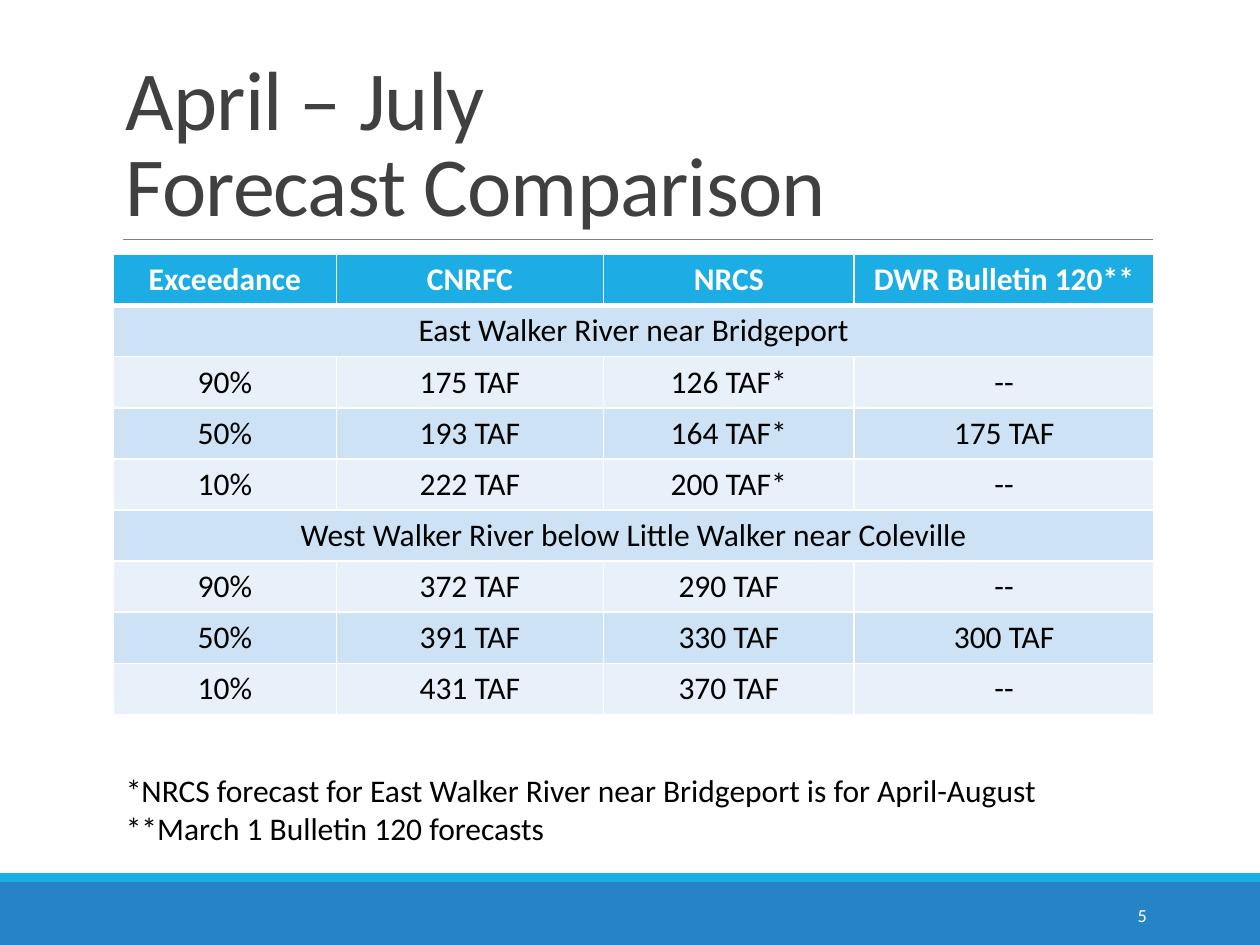
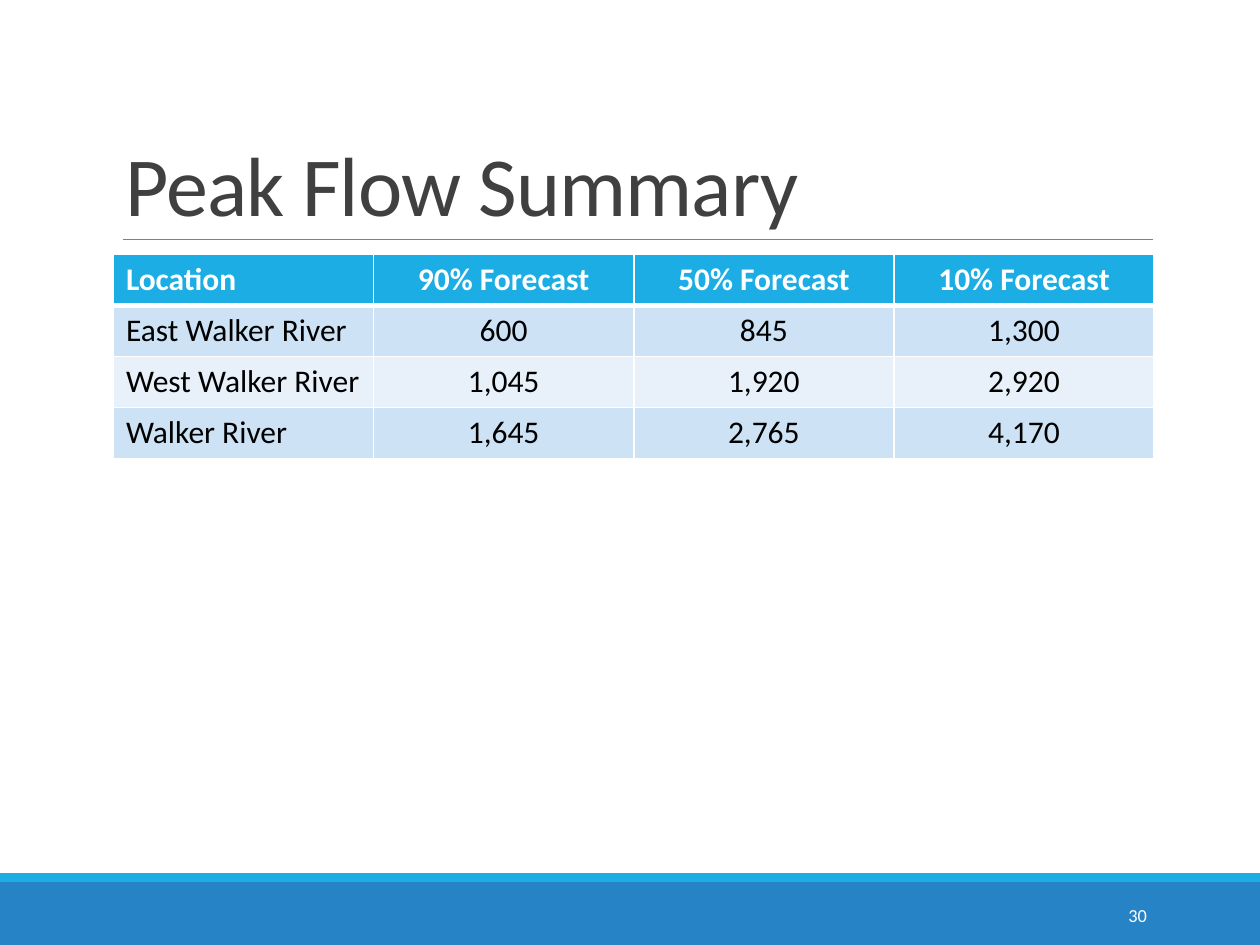
import pptx
import pptx.util
import pptx.dml.color
import pptx.enum.shapes
import pptx.enum.text
import pptx.oxml.ns
from lxml import etree

Inches = pptx.util.Inches
Pt = pptx.util.Pt
RGBColor = pptx.dml.color.RGBColor
ALIGN = pptx.enum.text.PP_ALIGN
ANCHOR = pptx.enum.text.MSO_ANCHOR
qn = pptx.oxml.ns.qn

FONT = "Calibri"
WHITE = RGBColor(0xFF, 0xFF, 0xFF)
BLACK = RGBColor(0x00, 0x00, 0x00)
TITLE_GREY = RGBColor(0x40, 0x40, 0x40)
RULE_GREY = RGBColor(0x80, 0x80, 0x80)
BLUE = RGBColor(0x26, 0x83, 0xC6)
CYAN = RGBColor(0x1C, 0xAD, 0xE4)
BAND_DARK = RGBColor(0xCD, 0xE3, 0xF5)
BAND_LIGHT = RGBColor(0xE8, 0xF1, 0xFA)


class Deck:
    """Holds the shared style and the slide being built."""

    def __init__(self):
        self.prs = pptx.Presentation()
        self.prs.slide_width = Inches(10)
        self.prs.slide_height = Inches(7.5)
        self.s = None

    def add_slide(self, title, number):
        self.s = self.prs.slides.add_slide(self.prs.slide_layouts[6])
        # Footer bands and title rule
        self.band(7, 0.5, BLUE)
        self.band(6.93, 0.07, CYAN)
        self.rule(0.98, 9.15, 1.9)
        # Title and slide number
        sp = self.text(title, 0.9, 0.31, 8.25, 1.59, 48, TITLE_GREY, anchor=ANCHOR.BOTTOM)
        for p in sp.text_frame.paragraphs:
            p.line_spacing = 0.85
            for r in p.runs:
                r._r.get_or_add_rPr().set("spc", "-50")
        self.text(str(number), 8.12, 7.06, 1.08, 0.4, 10.5, WHITE,
                  align=ALIGN.RIGHT, anchor=ANCHOR.MIDDLE)

    def band(self, top, height, color):
        sp = self.s.shapes.add_shape(pptx.enum.shapes.MSO_SHAPE.RECTANGLE,
                                     0, Inches(top), self.prs.slide_width, Inches(height))
        sp.shadow.inherit = False
        sp.fill.solid()
        sp.fill.fore_color.rgb = color
        sp.line.fill.background()

    def rule(self, left, right, y):
        line = self.s.shapes.add_connector(pptx.enum.shapes.MSO_CONNECTOR.STRAIGHT,
                                           Inches(left), Inches(y), Inches(right), Inches(y))
        line.line.color.rgb = RULE_GREY
        line.line.width = Pt(0.5)
        etree.SubElement(line._element.spPr, qn("a:effectLst"))

    def format_text(self, tf, size, color, align, bold=False):
        for p in tf.paragraphs:
            p.alignment = align
            for r in p.runs:
                r.font.name = FONT
                r.font.size = Pt(size)
                r.font.bold = bold
                r.font.color.rgb = color

    def text(self, text, left, top, width, height, size, color,
             align=ALIGN.LEFT, anchor=ANCHOR.TOP, wrap=True):
        sp = self.s.shapes.add_textbox(Inches(left), Inches(top), Inches(width), Inches(height))
        tf = sp.text_frame
        tf.word_wrap = wrap
        tf.vertical_anchor = anchor
        tf.text = text
        self.format_text(tf, size, color, align)
        return sp

    def borders(self, cell, top, bottom):
        tcPr = cell._tc.get_or_add_tcPr()
        for side, width in (("L", 1), ("R", 1), ("T", top), ("B", bottom)):
            ln = etree.SubElement(tcPr, qn("a:ln" + side), w=str(Pt(width)))
            fill = etree.SubElement(ln, qn("a:solidFill"))
            etree.SubElement(fill, qn("a:srgbClr"), val=str(WHITE))

    def table(self, rows, width, height, col_widths=None, first_align=ALIGN.CENTER):
        """A one-item row becomes a heading across all columns."""
        n_cols = len(rows[0])
        table = self.s.shapes.add_table(len(rows), n_cols, Inches(0.9), Inches(2.02),
                                        Inches(width), Inches(height)).table
        table.horz_banding = False
        for col, col_width in zip(table.columns, col_widths or []):
            col.width = Inches(col_width)
        for i, row in enumerate(rows):
            header = i == 0
            fill = CYAN if header else BAND_DARK if i % 2 else BAND_LIGHT
            for j in range(n_cols):
                cell = table.cell(i, j)
                self.borders(cell, 3 if i == 1 else 1, 3 if header else 1)
                cell.fill.solid()
                cell.fill.fore_color.rgb = fill
                if j < len(row):
                    cell.text_frame.text = row[j]
                    self.format_text(cell.text_frame, 18, WHITE if header else BLACK,
                                     ALIGN.CENTER if j else first_align, header)
            if len(row) == 1:
                table.cell(i, 0).merge(table.cell(i, n_cols - 1))


def main():
    deck = Deck()

    # Forecast comparison
    deck.add_slide("April – July\vForecast Comparison", 5)
    deck.table([
        ["Exceedance", "CNRFC", "NRCS", "DWR Bulletin 120**"],
        ["East Walker River near Bridgeport"],
        ["90%", "175 TAF", "126 TAF*", "--"],
        ["50%", "193 TAF", "164 TAF*", "175 TAF"],
        ["10%", "222 TAF", "200 TAF*", "--"],
        ["West Walker River below Little Walker near Coleville"],
        ["90%", "372 TAF", "290 TAF", "--"],
        ["50%", "391 TAF", "330 TAF", "300 TAF"],
        ["10%", "431 TAF", "370 TAF", "--"],
    ], 8.25, 3.65, col_widths=[1.77, 2.12, 1.99, 2.38])
    deck.text("*NRCS forecast for East Walker River near Bridgeport is for April-August\n"
              "**March 1 Bulletin 120 forecasts",
              0.9, 6.07, 7.51, 0.71, 18, BLACK, wrap=False)

    # Peak flow summary
    deck.add_slide("Peak Flow Summary", 30)
    deck.table([
        ["Location", "90% Forecast", "50% Forecast", "10% Forecast"],
        ["East Walker River", "600", "845", "1,300"],
        ["West Walker River", "1,045", "1,920", "2,920"],
        ["Walker River", "1,645", "2,765", "4,170"],
    ], 8.26, 1.62, first_align=ALIGN.LEFT)

    deck.prs.save("out.pptx")


if __name__ == "__main__":
    main()
